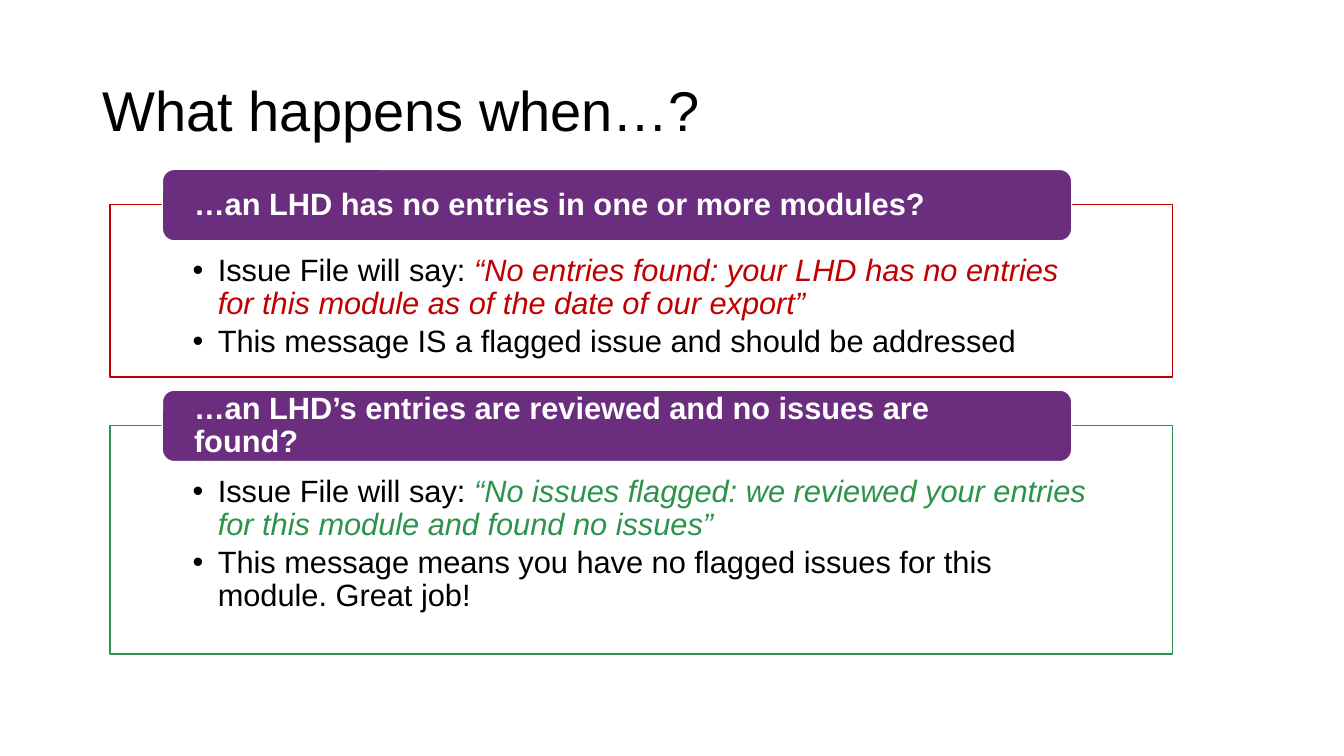
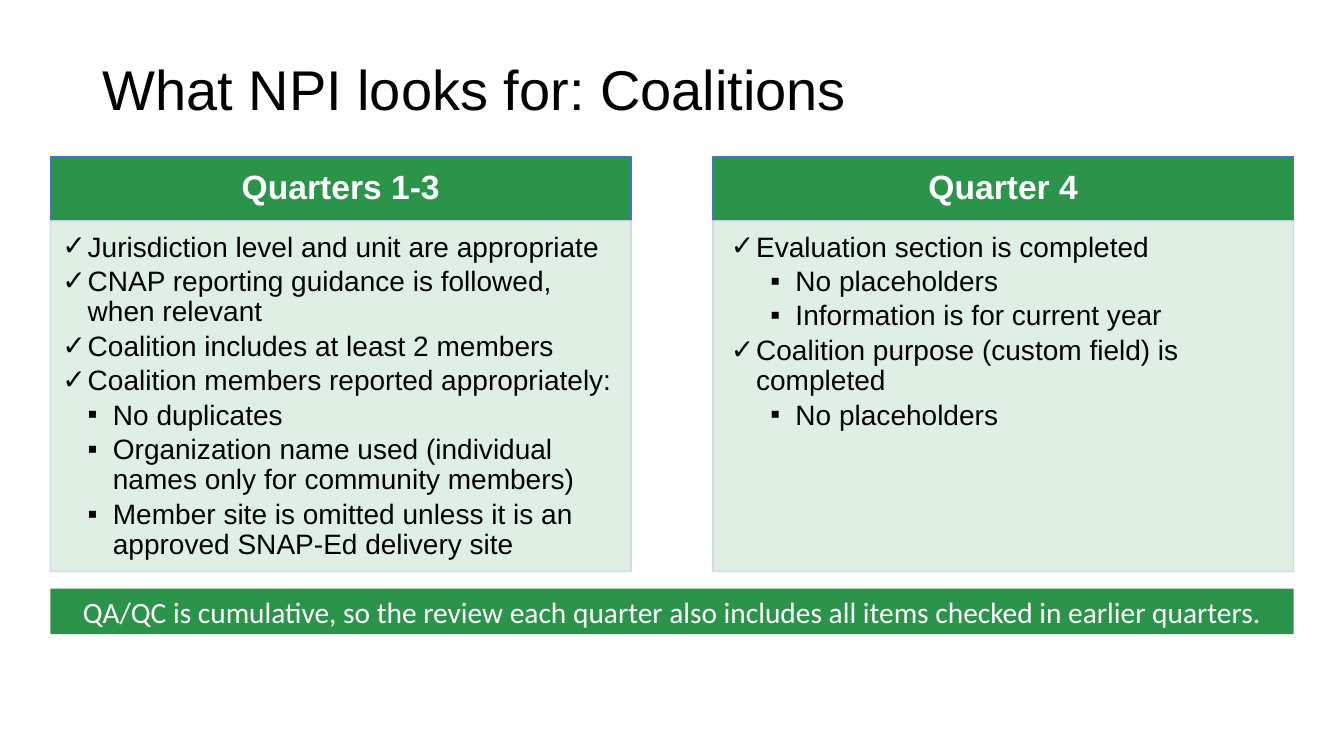
from lxml import etree
from pptx import Presentation
from pptx.dml.color import RGBColor
from pptx.enum.shapes import MSO_SHAPE
from pptx.enum.text import MSO_ANCHOR, PP_ALIGN
from pptx.oxml.ns import qn
from pptx.util import Inches, Pt

RECT, ROUND_RECT = MSO_SHAPE.RECTANGLE, MSO_SHAPE.ROUNDED_RECTANGLE
TOP, MIDDLE = MSO_ANCHOR.TOP, MSO_ANCHOR.MIDDLE
LEFT, CENTER = PP_ALIGN.LEFT, PP_ALIGN.CENTER

COLORS = {
    "black": "000000",
    "white": "FFFFFF",
    "green": "2C944A",
    "red": "C00000",
    "purple": "6B2D7D",
    "blue": "4472C4",
    "pale_blue": "CFD5EA",
}
FONT = "Arial"
HANGING = 0.25

MESSAGES = [
    dict(
        top=2.03, height=1.71, accent="red",
        question="…an LHD has no entries in one or more modules?",
        quote="“No entries found: your LHD has no entries for this module "
              "as of the date of our export”",
        meaning="This message IS a flagged issue and should be addressed",
    ),
    dict(
        top=4.22, height=2.27, accent="green",
        question="…an LHD’s entries are reviewed and no issues are found?",
        quote="“No issues flagged: we reviewed your entries for this module "
              "and found no issues”",
        meaning="This message means you have no flagged issues for this "
                "module. Great job!",
    ),
]

# Each checklist: heading, indents of its two levels, (level, text) items
CHECKLISTS = [
    ("Quarters 1-3", (0.25, 0.5), [
        (0, "Jurisdiction level and unit are appropriate"),
        (0, "CNAP reporting guidance is followed, when relevant"),
        (0, "Coalition includes at least 2 members"),
        (0, "Coalition members reported appropriately:"),
        (1, "No duplicates"),
        (1, "Organization name used (individual names only for community members)"),
        (1, "Member site is omitted unless it is an approved SNAP-Ed delivery site"),
    ]),
    ("Quarter 4", (0.31, 0.7), [
        (0, "Evaluation section is completed"),
        (1, "No placeholders"),
        (1, "Information is for current year"),
        (0, "Coalition purpose (custom field) is completed"),
        (1, "No placeholders"),
    ]),
]
CHECK_BULLETS = "✓▪"


def rgb(name):
    return RGBColor.from_string(COLORS[name])


def set_opacity(parent, percent):
    """Make the solid fill directly under a shape's or line's XML translucent."""
    color = parent.find(qn("a:solidFill"))[0]
    etree.SubElement(color, qn("a:alpha"), val=str(percent * 1000))


def add_box(slide, left, top, width, height, shape=RECT, fill="white",
            line=None, fill_opacity=100, line_opacity=100):
    sp = slide.shapes.add_shape(shape, Inches(left), Inches(top),
                                Inches(width), Inches(height))
    sp.shadow.inherit = False
    sp.fill.solid()
    sp.fill.fore_color.rgb = rgb(fill)
    if fill_opacity < 100:
        set_opacity(sp._element.spPr, fill_opacity)
    if line is None:
        sp.line.fill.background()
    else:
        sp.line.color.rgb = rgb(line)
        sp.line.width = Pt(1)
        if line_opacity < 100:
            set_opacity(sp._element.spPr.find(qn("a:ln")), line_opacity)
    return sp


def setup_frame(sp, anchor=MIDDLE, insets=(0.1, 0.05, 0.1, 0.05)):
    tf = sp.text_frame
    tf.word_wrap = True
    tf.vertical_anchor = anchor
    (tf.margin_left, tf.margin_top,
     tf.margin_right, tf.margin_bottom) = map(Inches, insets)
    return tf


def add_bullet(p, char, indent):
    pPr = p._p.get_or_add_pPr()
    pPr.set("marL", str(Inches(indent)))
    pPr.set("indent", str(-Inches(HANGING)))
    etree.SubElement(pPr, qn("a:buFont"), typeface=FONT)
    etree.SubElement(pPr, qn("a:buChar"), char=char)


def add_text(tf, *runs, size, color="black", font=FONT, bold=False, align=LEFT,
             spacing=0.9, after=0, bullet=None, indent=0, level=0):
    """Add a paragraph; a run is a string, or (string, colour) for italics."""
    p = tf.paragraphs[0] if not tf.text else tf.add_paragraph()
    p.level = level
    if bullet:
        add_bullet(p, bullet, indent)
    p.alignment = align
    p.line_spacing = spacing
    p.space_before = Pt(0)
    p.space_after = Pt(after)
    for run in runs:
        italic = not isinstance(run, str)
        text, run_color = run if italic else (run, color)
        r = p.add_run()
        r.text = text
        r.font.name = font
        r.font.size = Pt(size)
        r.font.bold = bold
        r.font.italic = italic
        r.font.color.rgb = rgb(run_color)


def add_title(slide, text, height):
    sp = slide.shapes.add_textbox(Inches(0.92), Inches(0.4),
                                  Inches(11.5), Inches(height))
    add_text(setup_frame(sp), text, size=40)


def add_message(slide, top, height, accent, question, quote, meaning):
    """Outlined panel with a rounded heading across its top edge."""
    panel = add_box(slide, 1.09, top, 10.54, height, line=accent,
                    fill_opacity=90)
    tf = setup_frame(panel, TOP, (0.82, 0.5, 0.82, 0.17))
    for runs in (["Issue File will say: ", (quote, accent)], [meaning]):
        add_text(tf, *runs, size=22, after=3.3, bullet="•", indent=HANGING,
                 level=1)
    heading = add_box(slide, 1.61, top - 0.35, 9.02, 0.71, ROUND_RECT,
                      "purple", "white")
    add_text(setup_frame(heading, insets=(0.28, 0, 0.28, 0)), question,
             size=22, color="white", bold=True)


def add_checklist(slide, left, width, heading, indents, items):
    top, heading_height = 1.56, 0.63
    sp = add_box(slide, left, top, width, heading_height, fill="green",
                 line="blue")
    add_text(setup_frame(sp, insets=(0.19, 0.11, 0.19, 0.11)), heading,
             size=24, color="white", bold=True, align=CENTER)
    sp = add_box(slide, left, top + heading_height, width, 3.48, fill="green",
                 line="pale_blue", fill_opacity=15, line_opacity=90)
    tf = setup_frame(sp, TOP, (0.12, 0.12, 0.16, 0.17))
    for level, text in items:
        add_text(tf, text, size=20, after=3, bullet=CHECK_BULLETS[level],
                 indent=indents[level], level=level + 1)


def build_messages(slide):
    for message in MESSAGES:
        add_message(slide, **message)
    add_title(slide, "What happens when…?", 1.45)


def build_coalitions(slide):
    left, total_width, width = 0.5, 12.33, 5.76
    add_title(slide, "What NPI looks for: Coalitions", 1.03)
    for i, checklist in enumerate(CHECKLISTS):
        add_checklist(slide, left + i * (total_width - width), width, *checklist)
    banner = add_box(slide, left, 5.84, total_width, 0.45, fill="green")
    add_text(setup_frame(banner),
             "QA/QC is cumulative, so the review each quarter also includes "
             "all items checked in earlier quarters.",
             size=21, color="white", font="Calibri", align=CENTER, spacing=1.0)


def main():
    prs = Presentation()
    prs.slide_width, prs.slide_height = Inches(13.33), Inches(7.5)
    for build in (build_messages, build_coalitions):
        build(prs.slides.add_slide(prs.slide_layouts[6]))
    prs.save("out.pptx")


if __name__ == "__main__":
    main()
